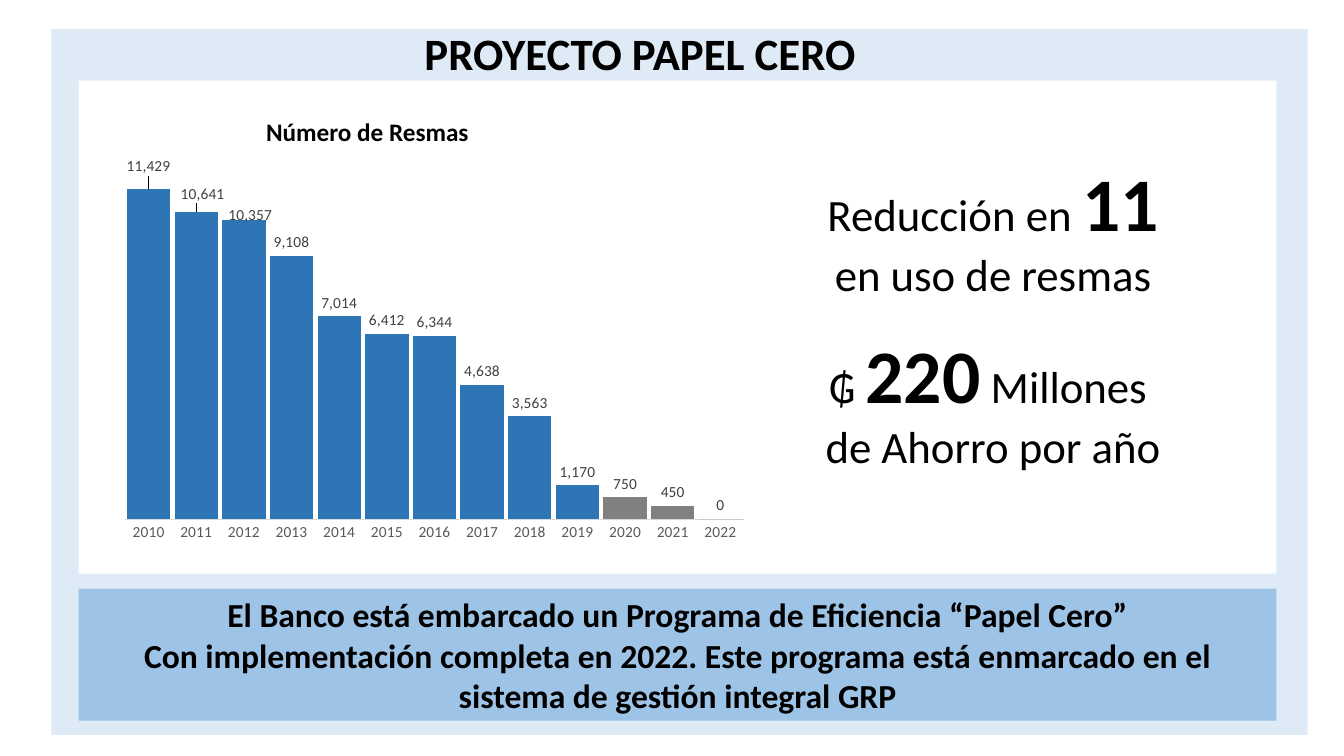
from lxml import etree
from pptx import Presentation
from pptx.chart.data import CategoryChartData
from pptx.dml.color import RGBColor
from pptx.enum import chart as charts, shapes, text
from pptx.oxml.ns import qn
from pptx.util import Inches, Pt

PALE_BLUE = RGBColor(0xDE, 0xEB, 0xF7)
LIGHT_BLUE = RGBColor(0x9D, 0xC3, 0xE6)
BAR_BLUE = RGBColor(0x2E, 0x75, 0xB6)
BAR_GRAY = RGBColor(0x80, 0x80, 0x80)
LABEL_GRAY = RGBColor(0x40, 0x40, 0x40)
YEAR_GRAY = RGBColor(0x59, 0x59, 0x59)
AXIS_GRAY = RGBColor(0xD9, 0xD9, 0xD9)
WHITE = RGBColor(0xFF, 0xFF, 0xFF)
BLACK = RGBColor(0, 0, 0)

REAMS = [11429, 10641, 10357, 9108, 7014, 6412, 6344,
         4638, 3563, 1170, 750, 450, 0]
PROJECTED = (10, 11)
LABEL_SHIFTS = {0: (0, -0.02), 1: (0.01, -0.01), 2: (0.01, 0.02)}
PLOT_AREA = {"x": 0.02, "y": 0.15, "w": 0.96, "h": 0.78}

SAVINGS = [
    [("Reducción en ", 32, False), ("11", 54, True)],
    [("en uso de resmas", 32, False)],
    [("₲ ", 32, False), ("220", 54, True), (" Millones ", 32, False)],
    [("de Ahorro por año", 32, False)],
]
PROGRAMME = [
    [("El Banco está embarcado un Programa de Eficiencia “Papel Cero”", 24, True)],
    [("Con implementación completa en 2022. Este programa está enmarcado "
      "en el sistema de gestión integral GRP", 24, True)],
]


def set_font(font, size, color=BLACK, bold=False):
    formats = {"name": "Calibri", "size": Pt(size), "bold": bold}
    for attribute, value in formats.items():
        setattr(font, attribute, value)
    font.color.rgb = color


def write(frame, lines, align, anchor=text.MSO_ANCHOR.TOP, wrap=False):
    """Fill a frame with lines made of (words, size, bold) runs."""
    frame.word_wrap = wrap
    frame.vertical_anchor = anchor
    for index, line in enumerate(lines):
        paragraph = frame.add_paragraph() if index else frame.paragraphs[0]
        paragraph.alignment = align
        paragraph.line_spacing = 1.0
        for words, size, bold in line:
            run = paragraph.add_run()
            run.text = words
            set_font(run.font, size, bold=bold)


def add_panel(slide, left, top, width, height, color):
    panel = slide.shapes.add_shape(
        shapes.MSO_SHAPE.RECTANGLE, *map(Inches, (left, top, width, height)))
    panel.shadow.inherit = False
    panel.fill.solid()
    panel.fill.fore_color.rgb = color
    panel.line.fill.background()
    return panel


def add_text(slide, left, top, width, height, lines, align):
    box = slide.shapes.add_textbox(*map(Inches, (left, top, width, height)))
    write(box.text_frame, lines, align)
    return box.text_frame


def place_title(slide, words):
    title = slide.shapes.title
    place = {"left": 4.11, "top": 0.2, "width": 5.48, "height": 0.64}
    for side, length in place.items():
        setattr(title, side, Inches(length))
    write(title.text_frame, [[(words, 32, True)]], text.PP_ALIGN.LEFT)
    return title


def manual_layout(values, inner=False):
    layout = etree.Element(qn("c:layout"))
    manual = etree.SubElement(layout, qn("c:manualLayout"))
    settings = {"layoutTarget": "inner", "xMode": "edge", "yMode": "edge"} if inner else {}
    for tag, value in {**settings, **values}.items():
        etree.SubElement(manual, qn("c:" + tag)).set("val", str(value))
    return layout


def format_axes(chart):
    years = chart.category_axis
    years.major_tick_mark = charts.XL_TICK_MARK.NONE
    years.format.line.color.rgb = AXIS_GRAY
    years.format.line.width = Pt(0.75)
    set_font(years.tick_labels.font, 11, YEAR_GRAY)
    scale = chart.value_axis
    scale.minimum_scale, scale.maximum_scale = 0, 12000
    scale.has_major_gridlines = False
    scale.visible = False


def format_labels(plot, series):
    plot.has_data_labels = True
    labels = plot.data_labels
    labels.show_value = True
    labels.number_format = "#,##0"
    labels.number_format_is_linked = False
    labels.position = charts.XL_LABEL_POSITION.OUTSIDE_END
    set_font(labels.font, 11, LABEL_GRAY)
    for index, (x, y) in LABEL_SHIFTS.items():
        label = series.points[index].data_label
        set_font(label.font, 11, LABEL_GRAY)
        label.position = charts.XL_LABEL_POSITION.OUTSIDE_END
    series_labels = series.data_labels
    series_labels.show_value = True
    series_labels.position = charts.XL_LABEL_POSITION.OUTSIDE_END
    set_font(series_labels.font, 11, LABEL_GRAY)
    for idx in series_labels._element.iterfind("c:dLbl/c:idx", {"c": etree.QName(qn("c:idx")).namespace}):
        x, y = LABEL_SHIFTS[int(idx.get("val"))]
        idx.addnext(manual_layout({"x": x, "y": y}))


def add_reams_chart(slide):
    data = CategoryChartData(number_format="#,##0")
    data.categories = [str(2010 + year) for year in range(len(REAMS))]
    data.add_series("Resmas", REAMS)
    chart = slide.shapes.add_chart(
        charts.XL_CHART_TYPE.COLUMN_CLUSTERED,
        *map(Inches, (1.11, 1.05, 6.4, 4.41)), data).chart
    chart.has_legend = False
    chart.has_title = False
    set_font(chart.font, 11)
    plot = chart.plots[0]
    plot.vary_by_categories = False
    plot.gap_width, plot.overlap = 10, -27
    series = plot.series[0]
    series.format.fill.solid()
    series.format.fill.fore_color.rgb = BAR_BLUE
    for index in PROJECTED:
        bar = series.points[index].format.fill
        bar.solid()
        bar.fore_color.rgb = BAR_GRAY
    format_axes(chart)
    format_labels(plot, series)
    plot_area = chart.element.chart.plotArea
    for layout in plot_area.findall(qn("c:layout")):
        plot_area.remove(layout)
    plot_area.insert(0, manual_layout(PLOT_AREA, inner=True))


def main():
    deck = Presentation()
    deck.slide_width, deck.slide_height = Inches(13.33), Inches(7.5)
    slide = deck.slides.add_slide(deck.slide_layouts[5])
    title = place_title(slide, "PROYECTO PAPEL CERO")
    backdrop = add_panel(slide, 0.51, 0.29, 12.46, 7, PALE_BLUE)
    title.element.addprevious(backdrop.element)
    add_panel(slide, 0.78, 0.8, 11.88, 4.89, WHITE)
    footer = add_panel(slide, 0.78, 5.84, 11.88, 1.31, LIGHT_BLUE)
    write(footer.text_frame, PROGRAMME, text.PP_ALIGN.CENTER,
          text.MSO_ANCHOR.MIDDLE, wrap=True)
    savings = add_text(slide, 8.04, 1.5, 3.62, 3.8, SAVINGS, text.PP_ALIGN.CENTER)
    savings.paragraphs[2].space_before = Pt(19.5)
    add_reams_chart(slide)
    add_text(slide, 2.54, 1.1, 2.42, 0.4,
             [[("Número de Resmas", 18, True)]], text.PP_ALIGN.LEFT)
    deck.save("out.pptx")


if __name__ == "__main__":
    main()
